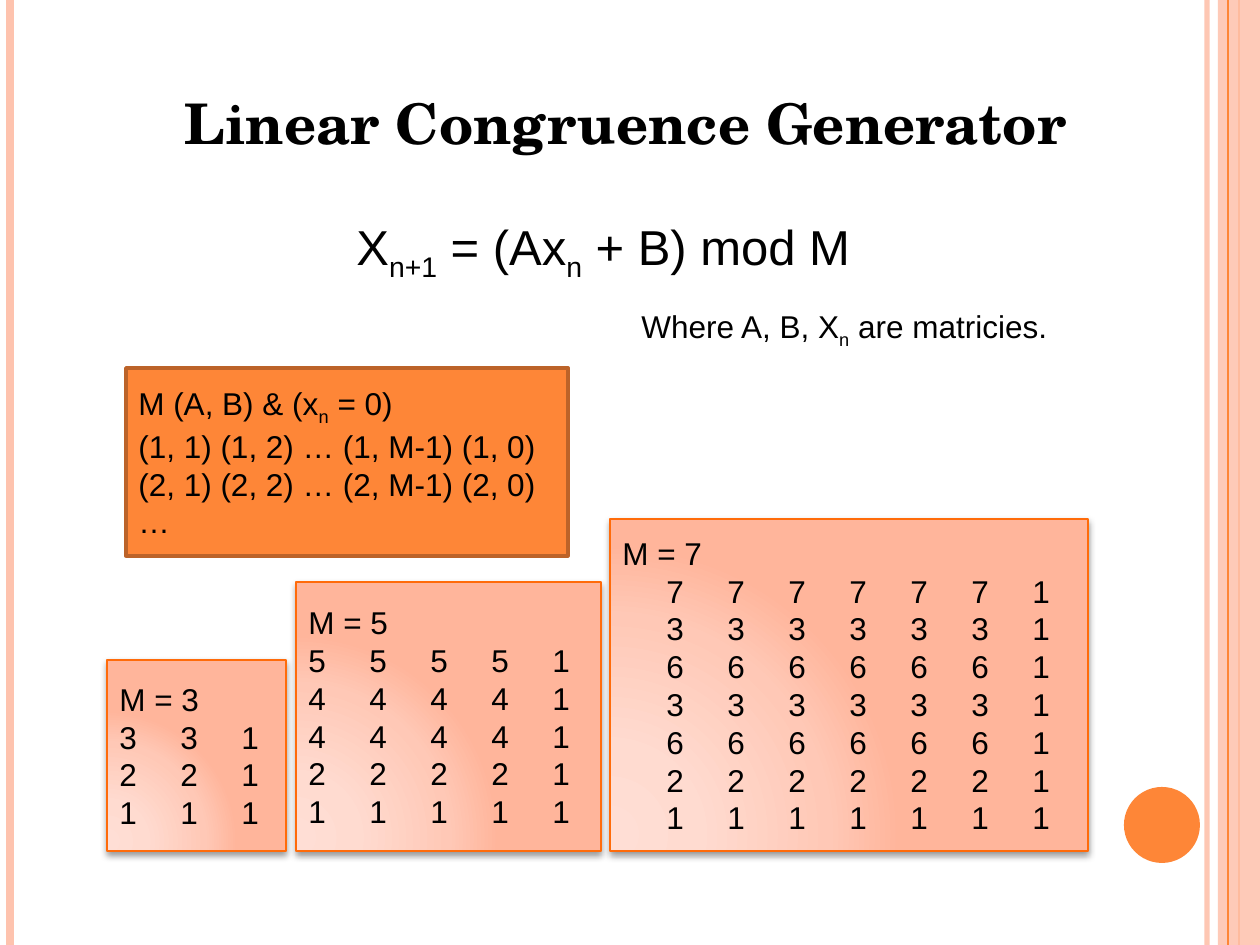
from lxml.etree import SubElement as Sub
from pptx import Presentation
from pptx.dml.color import RGBColor as Rgb
from pptx.enum.shapes import MSO_CONNECTOR as Conn, MSO_SHAPE as Geo
from pptx.enum.text import MSO_ANCHOR as Anchor, PP_ALIGN as Align
from pptx.oxml.ns import qn
from pptx.util import Pt

HUES = {
    "ink": "000000", "orange": "FE8637", "peach": "FEC3AE",
    "edge": "FF6B0A", "brown": "BC6329",
}
GLOW = [(0, "FFDED5"), (30, "FFDBD0"), (75, "FFC8B6"), (100, "FFB59B")]
FORM = {"path": "circle"}
FOCUS = {"l": 5, "t": 100, "r": 120, "b": 10}
SHADE = {"blurRad": Pt(4), "dist": Pt(2), "dir": 90 * 60000, "rotWithShape": 0}
BODY = {"name": "Arial", "size": Pt(18), "bold": False}
MATH = BODY | {"size": Pt(28)}
HEAD = {"name": "TeX Gyre Schola", "size": Pt(32), "bold": True}
SCALE = 914400 / 126
WIDE, HIGH = 1260, 945
PITCH = 61


def px(num):
    return round(num * SCALE)


def add(node, tag, **attrs):
    return Sub(node, qn(tag), {key: str(val) for key, val in attrs.items()})


class Deck:
    def __init__(self):
        self.show = Presentation()
        self.show.slide_width, self.show.slide_height = px(WIDE), px(HIGH)
        self.slide = self.show.slides.add_slide(self.show.slide_layouts[6])
        self.items = self.slide.shapes

    def tint(self, fill, hue, alpha=100):
        fill.solid()
        fill.fore_color.rgb = Rgb.from_string(HUES[hue])
        if alpha < 100:
            node = fill._xPr.find(qn("a:solidFill"))[0]
            add(node, "a:alpha", val=alpha * 1000)

    def rule(self, x, hue, width, alpha=100):
        line = self.items.add_connector(Conn.STRAIGHT, px(x), 0, px(x), px(HIGH))
        self.tint(line.line.fill, hue, alpha)
        line.line.width = Pt(width)
        add(line._element.spPr, "a:effectLst")

    def shape(self, kind, box, hue, alpha=100, edge=None, width=1):
        item = self.items.add_shape(kind, *map(px, box))
        item.shadow.inherit = False
        self.tint(item.fill, hue, alpha)
        if edge:
            self.tint(item.line.fill, edge)
            item.line.width = Pt(width)
        else:
            item.line.fill.background()
        return item

    def glow(self, item):
        props = item._element.spPr
        grad = add(props, "a:gradFill", rotWithShape=1)
        stops = add(grad, "a:gsLst")
        for pos, hue in GLOW:
            add(add(stops, "a:gs", pos=pos * 1000), "a:srgbClr", val=hue)
        sides = {key: val * 1000 for key, val in FOCUS.items()}
        add(add(grad, "a:path", **FORM), "a:fillToRect", **sides)
        props.replace(props.find(qn("a:solidFill")), grad)
        drop = add(props.find(qn("a:effectLst")), "a:outerShdw", **SHADE)
        add(add(drop, "a:srgbClr", val=HUES["ink"]), "a:alpha", val=40000)

    def text(self, item, lines, style=BODY, align=Align.LEFT, anchor=Anchor.MIDDLE, stops=()):
        frame = item.text_frame
        frame.word_wrap = True
        frame.vertical_anchor = anchor
        for num, line in enumerate(lines):
            para = frame.add_paragraph() if num else frame.paragraphs[0]
            para.alignment = align
            if stops:
                tabs = add(para._p.get_or_add_pPr(), "a:tabLst")
                for stop in stops:
                    add(tabs, "a:tab", pos=px(stop), algn="l")
            for part, words in enumerate(line.split("_")):
                run = para.add_run()
                run.text = words
                for key, val in style.items():
                    setattr(run.font, key, val)
                self.tint(run.font.fill, "ink")
                if part % 2:
                    run._r.get_or_add_rPr().set("baseline", "-25000")
        return frame

    def label(self, box, words, style=BODY, align=Align.LEFT):
        item = self.items.add_textbox(*map(px, box))
        return self.text(item, [words], style, align, Anchor.TOP)

    def card(self, box, mod, heads, lead=0):
        item = self.shape(Geo.RECTANGLE, box, "peach", edge="edge")
        self.glow(item)
        rows = ["\t".join([str(head)] * (mod - 1) + ["1"]) for head in heads]
        stops = [lead + PITCH * num for num in range(mod)]
        if lead:
            rows = ["\t" + row for row in rows]
        else:
            stops = stops[1:]
        self.text(item, [f"M = {mod}"] + rows, stops=stops)


def main():
    deck = Deck()
    deck.rule(1207, "peach", 3, 93)
    deck.rule(10, "peach", 4.5)
    deck.rule(1239, "orange", 1.5)
    deck.shape(Geo.RECTANGLE, (1218, 0, 42, HIGH), "peach", 87)
    deck.rule(1228, "orange", 0.75)
    deck.shape(Geo.OVAL, (1124, 787, 76, 76), "orange")

    title = deck.label((59, 82, 1134, 100), "Linear Congruence Generator", HEAD, Align.CENTER)
    title.paragraphs[0].space_before = Pt(6)
    deck.label((344, 210, 576, 131), "X_n+1_ = (Ax_n_ + B) mod M", MATH)
    deck.label((629, 301, 441, 50), "Where A, B, X_n_ are matricies.")

    deck.card((107, 660, 179, 191), 3, [3, 2, 1])
    deck.card((296, 582, 305, 269), 5, [5, 4, 4, 2, 1])
    deck.card((610, 519, 478, 332), 7, [7, 3, 6, 3, 6, 2, 1], lead=44)

    pairs = deck.shape(Geo.RECTANGLE, (126, 368, 442, 188), "orange", edge="brown", width=2)
    deck.text(pairs, [
        "M (A, B) & (x_n_ = 0)",
        "(1, 1) (1, 2) … (1, M-1) (1, 0)",
        "(2, 1) (2, 2) … (2, M-1) (2, 0)",
        "…",
    ])
    deck.show.save("out.pptx")


if __name__ == "__main__":
    main()
